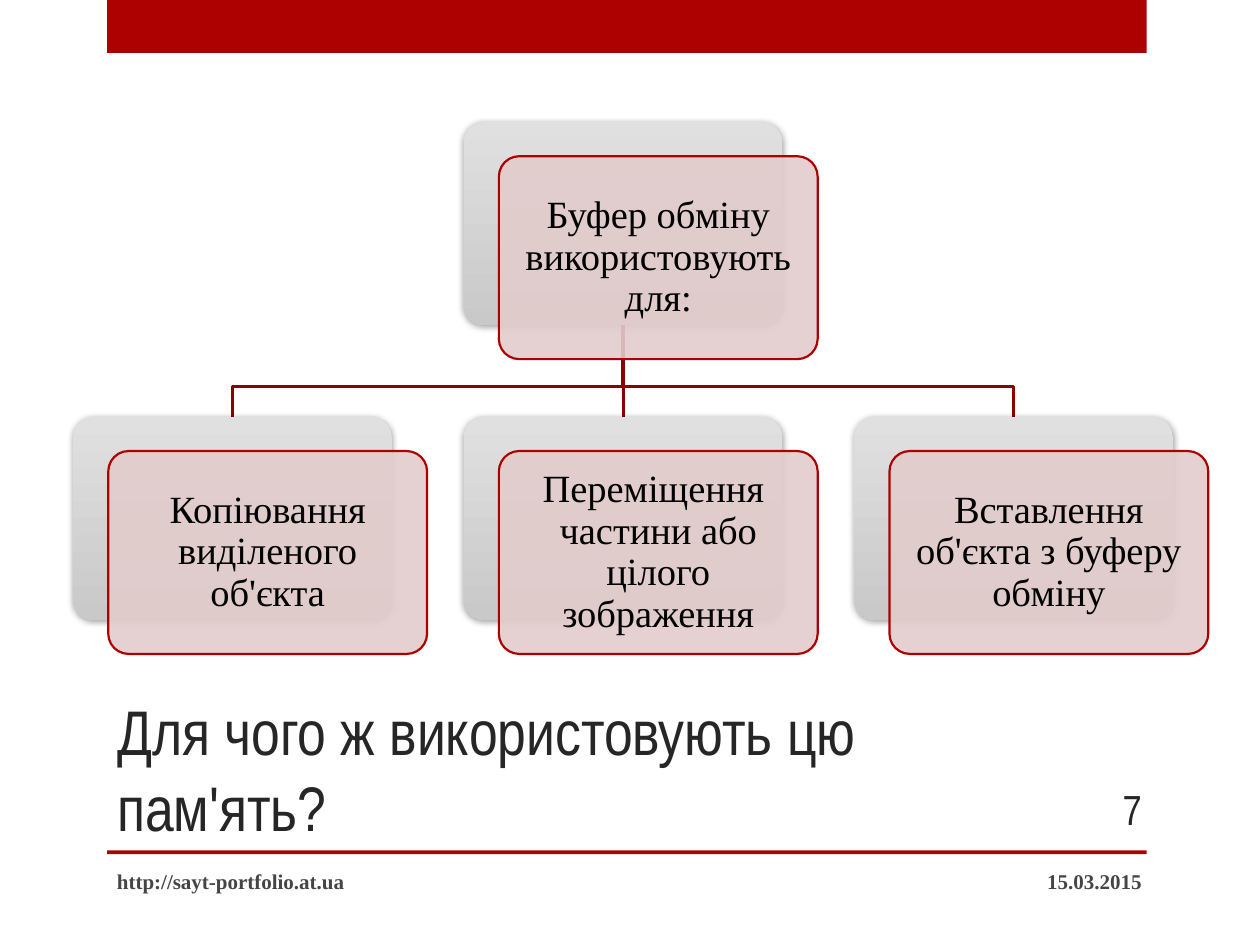
from lxml.etree import SubElement
from pptx import Presentation
from pptx.dml.color import RGBColor
from pptx.enum.shapes import MSO_CONNECTOR, MSO_SHAPE
from pptx.enum.text import MSO_ANCHOR, PP_ALIGN
from pptx.oxml.ns import qn
from pptx.util import Inches, Pt

RED, BRANCH_RED = "AD0101", "8B0101"
BODY_FONT, HEAD_FONT = "Times New Roman", "Arial Narrow"
NODE_W, NODE_H = 2.53, 1.61
COLUMNS = [0.58 + 3.1 * i for i in range(3)]
PARENT_TOP, CHILD_TOP, FORK_Y = 0.97, 3.31, 3.07
PARENT = "Буфер обміну використовують для:"
CHILDREN = [
    "Копіювання виділеного об'єкта",
    "Переміщення  частини або цілого зображення",
    "Вставлення об'єкта з буферу обміну",
]


def rgb(value):
    return RGBColor.from_string(value)


def write(shape, text, size, font, color, align, anchor, bold=False):
    frame = shape.text_frame
    frame.word_wrap = True
    frame.vertical_anchor = anchor
    frame.text = text
    paragraph = frame.paragraphs[0]
    paragraph.alignment = align
    run_font = paragraph.runs[0].font
    run_font.size, run_font.name, run_font.bold = Pt(size), font, bold
    run_font.color.rgb = rgb(color)


def add_label(slide, box, text, size, font, color, align, bold=False):
    label = slide.shapes.add_textbox(*map(Inches, box))
    write(label, text, size, font, color, align, MSO_ANCHOR.MIDDLE, bold)


def add_band(slide, top, height):
    band = slide.shapes.add_shape(
        MSO_SHAPE.RECTANGLE, *map(Inches, (0.85, top, 8.25, height)))
    band.shadow.inherit = False
    band.fill.solid()
    band.fill.fore_color.rgb = rgb(RED)
    band.line.fill.background()


def add_rounded(slide, left, top):
    box = slide.shapes.add_shape(
        MSO_SHAPE.ROUNDED_RECTANGLE, *map(Inches, (left, top, NODE_W, NODE_H)))
    box.adjustments[0] = 0.1
    box.shadow.inherit = False
    return box


def add_alpha(color_element, percent):
    SubElement(color_element, qn("a:alpha"), val=str(percent * 1000))


def add_soft_shadow(shape):
    effects = shape._element.spPr.find(qn("a:effectLst"))
    shadow = SubElement(effects, qn("a:outerShdw"), blurRad=str(Pt(4)),
                        dist=str(Pt(1)), dir=str(88 * 60000), rotWithShape="0")
    add_alpha(SubElement(shadow, qn("a:srgbClr"), val="000000"), 40)


def add_node(slide, left, top, text):
    """Draw a grey backing with a translucent card over it; return the backing."""
    backing = add_rounded(slide, left, top)
    backing.fill.gradient()
    backing.fill.gradient_angle = 270
    for stop, color in zip(backing.fill.gradient_stops, ("E0E0E0", "C9C9C9")):
        stop.color.rgb = rgb(color)
    backing.line.fill.background()
    add_soft_shadow(backing)

    card = add_rounded(slide, left + 0.28, top + 0.27)
    card.fill.solid()
    card.fill.fore_color.rgb = rgb("E3CCCC")
    add_alpha(card._element.spPr.find(".//" + qn("a:srgbClr")), 90)
    card.line.color.rgb = rgb(RED)
    card.line.width = Pt(1.25)
    frame = card.text_frame
    frame.margin_left = frame.margin_right = Inches(0.09)
    frame.margin_top = frame.margin_bottom = Inches(0.09)
    write(card, text, 22, BODY_FONT, "000000", PP_ALIGN.CENTER, MSO_ANCHOR.MIDDLE)
    frame.paragraphs[0].line_spacing = 0.9
    return backing


def style_branch(branch):
    branch.line.color.rgb = rgb(BRANCH_RED)
    branch.line.width = Pt(1.75)


def add_bent_branch(slide, start_x, end_x):
    points = [(start_x, PARENT_TOP + NODE_H), (start_x, FORK_Y),
              (end_x, FORK_Y), (end_x, CHILD_TOP)]
    start, *rest = [(Inches(x), Inches(y)) for x, y in points]
    builder = slide.shapes.build_freeform(*start)
    builder.add_line_segments(rest, close=False)
    branch = builder.convert_to_shape()
    branch.shadow.inherit = False
    branch.fill.background()
    style_branch(branch)


def add_straight_branch(slide):
    branch = slide.shapes.add_connector(MSO_CONNECTOR.STRAIGHT, 0, 0, 0, 0)
    style_branch(branch)
    SubElement(branch._element.spPr, qn("a:effectLst"))
    return branch


def add_hierarchy(slide):
    left_x, middle_x, right_x = [left + NODE_W / 2 for left in COLUMNS]
    add_bent_branch(slide, middle_x, right_x)
    stem = add_straight_branch(slide)
    add_bent_branch(slide, middle_x, left_x)

    parent = add_node(slide, COLUMNS[1], PARENT_TOP, PARENT)
    children = [add_node(slide, left, CHILD_TOP, text)
                for left, text in zip(COLUMNS, CHILDREN)]
    stem.begin_connect(parent, 2)
    stem.end_connect(children[1], 0)


def set_title(slide, text):
    title = slide.shapes.title
    title.left, title.top = Inches(0.83), Inches(5)
    title.width, title.height = Inches(7.42), Inches(1.75)
    write(title, text, 36, HEAD_FONT, "262626", PP_ALIGN.LEFT, MSO_ANCHOR.BOTTOM)


def main():
    deck = Presentation()
    deck.slide_width, deck.slide_height = Inches(10), Inches(7.5)
    slide = deck.slides.add_slide(deck.slide_layouts[5])

    add_band(slide, 0, 0.42)
    add_band(slide, 6.75, 0.03)
    set_title(slide, "Для чого ж використовують цю пам'ять?")
    add_hierarchy(slide)
    add_label(slide, (6.83, 6.79, 2.33, 0.4), "15.03.2015",
              12, BODY_FONT, "454545", PP_ALIGN.RIGHT, bold=True)
    add_label(slide, (0.83, 6.79, 5.33, 0.4), "http://sayt-portfolio.at.ua",
              12, BODY_FONT, "454545", PP_ALIGN.LEFT, bold=True)
    add_label(slide, (8.33, 6.22, 0.83, 0.4), "7",
              24, HEAD_FONT, "262626", PP_ALIGN.RIGHT)
    deck.save("out.pptx")


if __name__ == "__main__":
    main()
